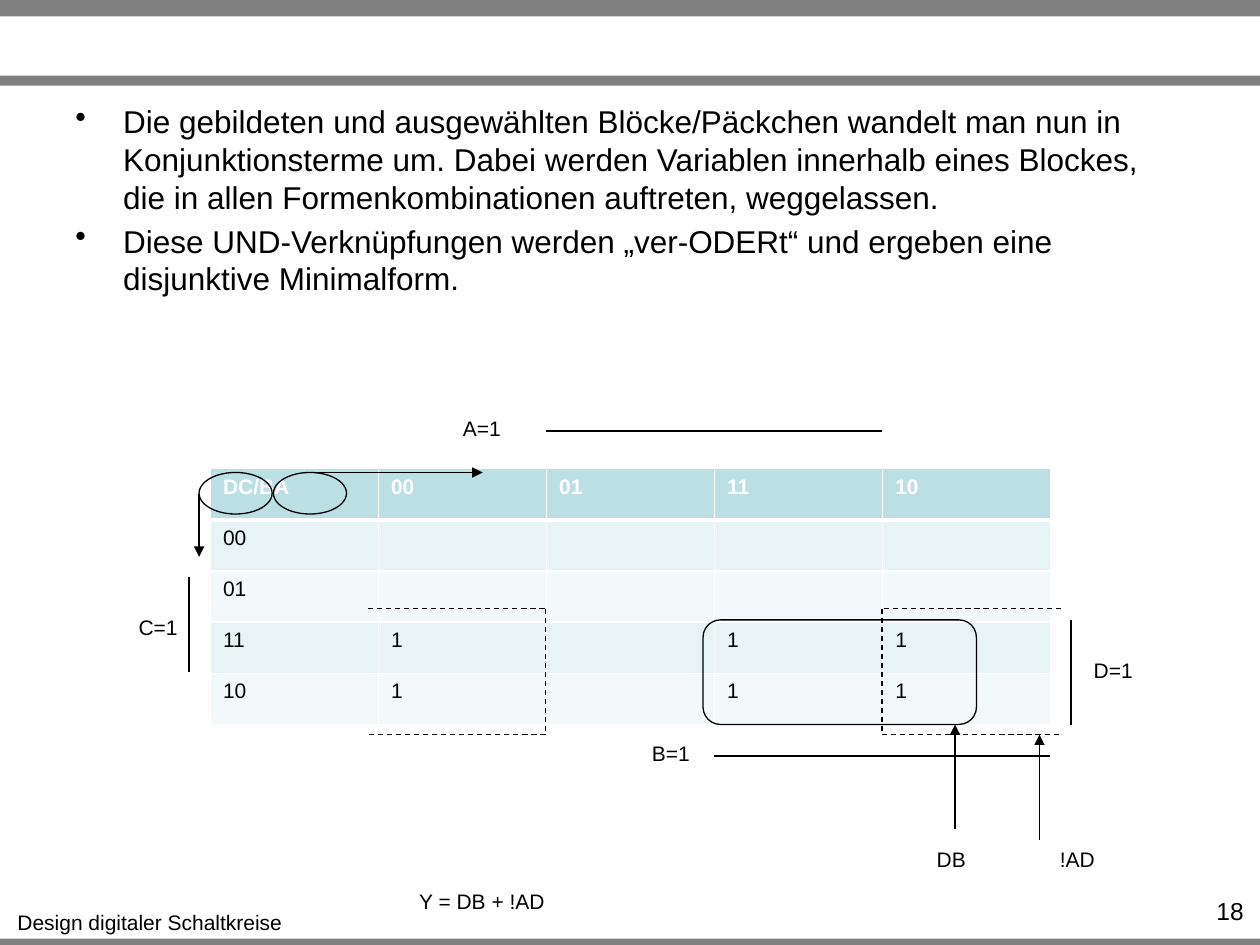
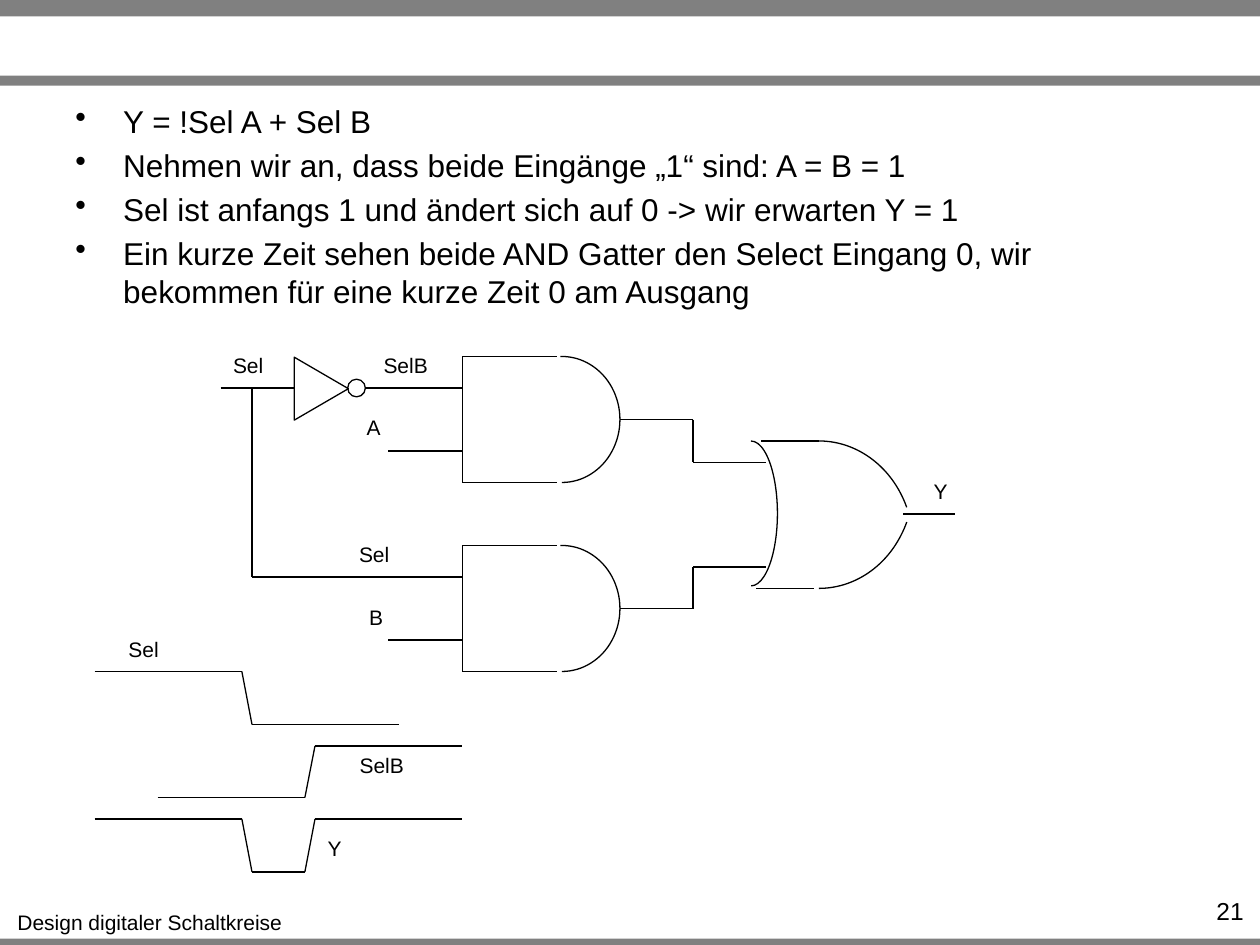
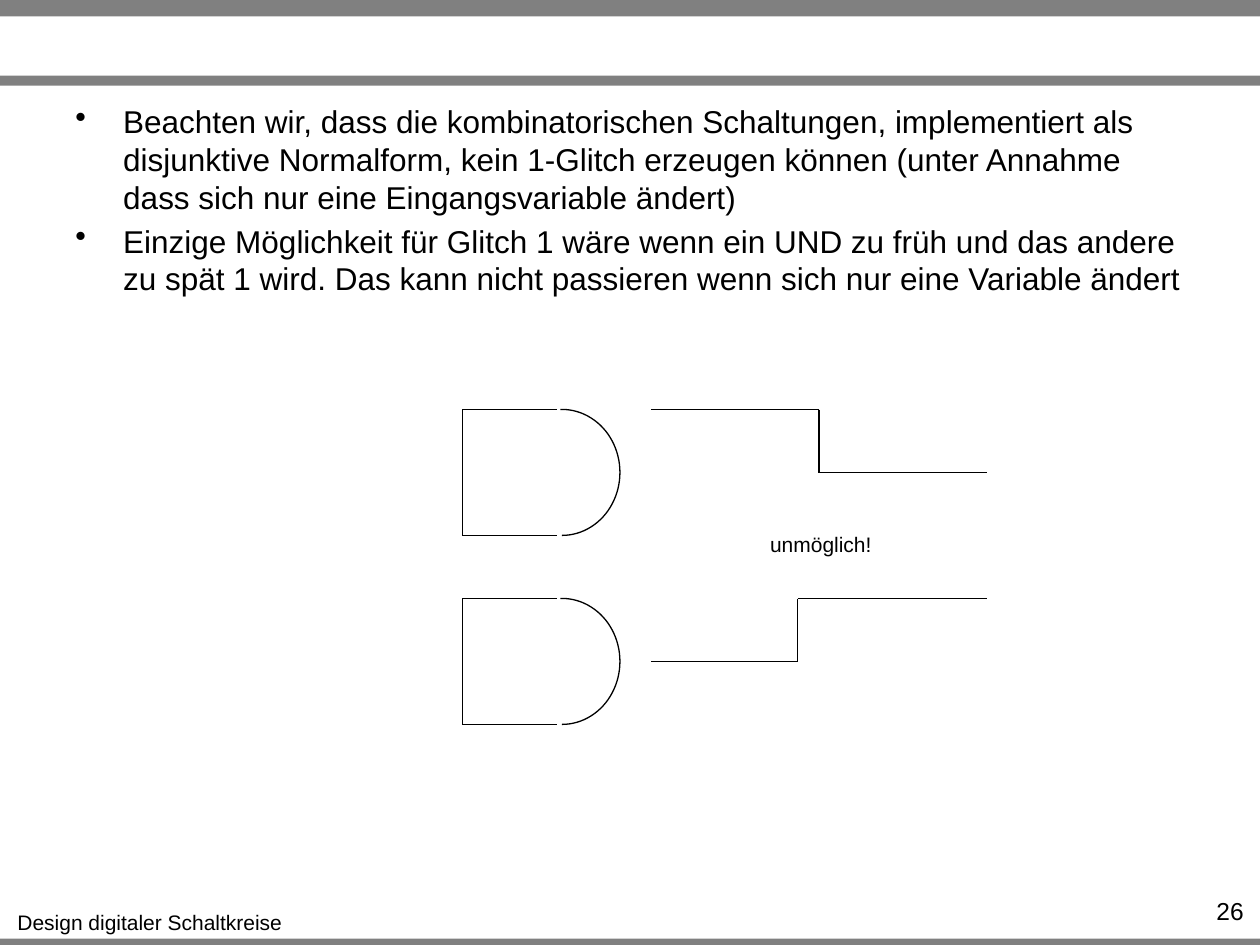
from dataclasses import dataclass
from itertools import pairwise
from typing import NamedTuple

from lxml.etree import SubElement
from pptx import Presentation
from pptx.dml.color import RGBColor
from pptx.enum.dml import MSO_LINE
from pptx.enum.shapes import MSO_CONNECTOR, MSO_SHAPE
from pptx.enum.text import MSO_AUTO_SIZE, PP_ALIGN
from pptx.oxml.ns import qn
from pptx.shapes.autoshape import Shape
from pptx.slide import Slide
from pptx.table import _Cell as Cell
from pptx.text.text import _Paragraph as Para
from pptx.util import Inches, Pt


@dataclass(frozen=True)
class Theme:
    """Colours, font and sizes that all slides share."""
    font: str = "Arial"
    ink: str = "000000"
    paper: str = "FFFFFF"
    band: str = "808080"
    head: str = "BBE0E3"
    odd: str = "E7F3F4"
    even: str = "F3F9FA"
    body: int = 18
    page: int = 14
    small: int = 12
    line: float = 0.75


class Box(NamedTuple):
    """Left, top, width and height in inches."""
    left: float
    top: float
    width: float
    height: float


class Tag(NamedTuple):
    """A short label with its place and width."""
    text: str
    left: float
    top: float
    width: float


class Wire(NamedTuple):
    """A chain of straight lines through points."""
    points: list[tuple[float, float]]
    dash: bool = False
    arrow: bool = False


class Arc(NamedTuple):
    """An arc of the ellipse in a box, clockwise in degrees."""
    box: Box
    start: float
    end: float


THEME = Theme()
BANDS = [Box(0, 7.45, 10, 0.08), Box(0, 0, 10, 0.13), Box(0, 0.6, 10, 0.08)]
FOOTER = Tag("Design digitaler Schaltkreise", 0.03, 7.17, 2.32)
BODY = Box(0.5, 0.76, 9, 1.99)
PAGE = Box(9.1, 7.06, 0.87, 0.24)

MAP_BOX = Box(1.67, 3.72, 6.67, 2.03)
MAP_ROWS = [
    ["DC/BA", "00", "01", "11", "10"],
    ["00", "", "", "", ""],
    ["01", "", "", "", ""],
    ["11", "1", "", "1", "1"],
    ["10", "1", "", "1", "1"],
]
MAP_RINGS = [
    (MSO_SHAPE.ROUNDED_RECTANGLE, Box(5.58, 4.92, 2.17, 0.83)),
    (MSO_SHAPE.OVAL, Box(1.58, 3.75, 0.58, 0.33)),
    (MSO_SHAPE.OVAL, Box(2.17, 3.75, 0.58, 0.33)),
]
MAP_WIRES = [
    Wire([(4.33, 3.42), (7, 3.42)]),
    Wire([(5.67, 6), (8.33, 6)]),
    Wire([(1.5, 4.58), (1.5, 5.33)]),
    Wire([(8.5, 4.92), (8.5, 5.75)]),
    Wire([(1.58, 3.92), (1.58, 4.42)], arrow=True),
    Wire([(2.46, 3.75), (3.83, 3.75)], arrow=True),
    Wire([(8.42, 4.83), (7, 4.83), (7, 5.83), (8.42, 5.83)], dash=True),
    Wire([(2.92, 4.83), (4.33, 4.83), (4.33, 5.83), (2.92, 5.83)], dash=True),
    Wire([(8.25, 6.67), (8.25, 5.83)], arrow=True),
    Wire([(7.58, 6.58), (7.58, 5.75)], arrow=True),
]
MAP_TAGS = [
    Tag("A=1", 3.57, 3.25, 0.51),
    Tag("B=1", 5.07, 5.83, 0.51),
    Tag("C=1", 1, 4.83, 0.51),
    Tag("D=1", 8.58, 5.17, 0.51),
    Tag("!AD", 8.31, 6.67, 0.48),
    Tag("DB", 7.33, 6.67, 0.44),
    Tag("Y = DB + !AD", 3.22, 7, 1.21),
]

OR_ARCS = [
    Arc(Box(5.75, 3.5, 0.42, 1.15), 270, 89.8),
    Arc(Box(5.75, 3.5, 1.5, 1.67), 270, 336.14),
    Arc(Box(5.75, 3, 1.5, 1.67), 23.86, 90),
]
MUX_WIRES = [
    Wire([(1.75, 3.08), (2.33, 3.08)]),
    Wire([(2.76, 3.08), (3.67, 3.08)]),
    Wire([(2, 3.08), (2, 4.58), (3.67, 4.58)]),
    Wire([(3.08, 3.58), (3.67, 3.58)]),
    Wire([(3.08, 5.08), (3.67, 5.08)]),
    Wire([(4.92, 3.33), (5.5, 3.33), (5.5, 3.67), (6.08, 3.67)]),
    Wire([(4.92, 4.83), (5.5, 4.83), (5.5, 4.5), (6.08, 4.5)]),
    Wire([(6.04, 3.5), (6.5, 3.5)]),
    Wire([(6, 4.67), (6.46, 4.67)]),
    Wire([(7.17, 4.08), (7.58, 4.08)]),
    Wire([(0.75, 5.33), (1.92, 5.33), (2, 5.75), (3.17, 5.75)]),
    Wire([(1.25, 6.33), (2.42, 6.33), (2.5, 5.92), (3.67, 5.92)]),
    Wire([(0.75, 6.5), (1.92, 6.5), (2, 6.92), (2.42, 6.92), (2.5, 6.5), (3.67, 6.5)]),
]
MUX_TAGS = [
    Tag("Sel", 1.75, 2.75, 0.44),
    Tag("SelB", 2.94, 2.75, 0.56),
    Tag("A", 2.81, 3.24, 0.31),
    Tag("Sel", 2.75, 4.25, 0.44),
    Tag("B", 2.83, 4.75, 0.31),
    Tag("Y", 7.31, 3.75, 0.31),
    Tag("Sel", 0.92, 5, 0.44),
    Tag("SelB", 2.75, 5.92, 0.56),
    Tag("Y", 2.5, 6.58, 0.31),
]

GLITCH_WIRES = [
    Wire([(5.17, 3.25), (6.5, 3.25), (6.5, 3.75), (7.83, 3.75)]),
    Wire([(5.17, 5.25), (6.33, 5.25), (6.33, 4.75), (7.83, 4.75)]),
]
GLITCH_TAG = Tag("unmöglich!", 6.01, 4.17, 1.01)


def place(box: Box) -> tuple[Inches, ...]:
    """Turn a box into lengths."""
    return tuple(Inches(side) for side in box)


def tint(code: str) -> RGBColor:
    """Turn a hex code into a colour."""
    return RGBColor.from_string(code)


def write(para: Para, text: str, size: int, ink: str = THEME.ink, bold: bool = False) -> None:
    """Add one styled run."""
    run = para.add_run()
    run.text = text
    run.font.name = THEME.font
    run.font.size = Pt(size)
    run.font.bold = bold
    run.font.color.rgb = tint(ink)


def draw_tag(slide: Slide, tag: Tag) -> None:
    """Draw a centred label that grows with its text."""
    frame = slide.shapes.add_textbox(*place(Box(tag.left, tag.top, tag.width, 0.3))).text_frame
    frame.word_wrap = False
    frame.auto_size = MSO_AUTO_SIZE.SHAPE_TO_FIT_TEXT
    frame.paragraphs[0].alignment = PP_ALIGN.CENTER
    write(frame.paragraphs[0], tag.text, THEME.small)


def draw_shape(slide: Slide, kind: MSO_SHAPE, box: Box, fill: str | None = None) -> Shape:
    """Draw a thin black outline, filled if asked."""
    shape = slide.shapes.add_shape(kind, *place(box))
    shape.shadow.inherit = False
    shape.line.color.rgb = tint(THEME.ink)
    shape.line.width = Pt(THEME.line)
    if fill:
        shape.fill.solid()
        shape.fill.fore_color.rgb = tint(fill)
    else:
        shape.fill.background()
    return shape


def draw_arc(slide: Slide, arc: Arc) -> None:
    """Draw an arc between two angles."""
    shape = draw_shape(slide, MSO_SHAPE.ARC, arc.box)
    for index, angle in enumerate((arc.start, arc.end)):
        shape.adjustments[index] = angle * 0.6


def draw_wire(slide: Slide, wire: Wire) -> None:
    """Join the points of a wire by lines."""
    for start, end in pairwise(wire.points):
        ends = [Inches(value) for value in (*start, *end)]
        link = slide.shapes.add_connector(MSO_CONNECTOR.STRAIGHT, *ends)
        link.line.color.rgb = tint(THEME.ink)
        link.line.width = Pt(THEME.line)
        if wire.dash:
            link.line.dash_style = MSO_LINE.DASH
        props = link._element.spPr
        if wire.arrow:
            SubElement(props.find(qn("a:ln")), qn("a:tailEnd"), type="triangle")
        SubElement(props, qn("a:effectLst"))


def draw_gate(slide: Slide, top: float) -> None:
    """Draw an AND gate."""
    base = top + 1
    draw_wire(slide, Wire([(4.42, top), (3.67, top), (3.67, base), (4.42, base)]))
    draw_arc(slide, Arc(Box(4, top, 0.92, 1), 268.5, 90))


def edge_cell(cell: Cell, base: int) -> None:
    """Give a cell white borders with a set base width."""
    props = cell._tc.get_or_add_tcPr()
    for side, width in (("L", 1), ("R", 1), ("T", 1), ("B", base)):
        line = SubElement(props, qn(f"a:ln{side}"), w=str(Pt(width)))
        SubElement(SubElement(line, qn("a:solidFill")), qn("a:srgbClr"), val=THEME.paper)


def draw_map(slide: Slide) -> None:
    """Draw the table of values."""
    size = len(MAP_ROWS)
    table = slide.shapes.add_table(size, size, *place(MAP_BOX)).table
    table.horz_banding = False
    for row, texts in enumerate(MAP_ROWS):
        head = row == 0
        fill = THEME.head if head else THEME.odd if row % 2 else THEME.even
        for column, text in enumerate(texts):
            cell = table.cell(row, column)
            edge_cell(cell, 3 if head else 1)
            cell.fill.solid()
            cell.fill.fore_color.rgb = tint(fill)
            if text:
                ink = THEME.paper if head else THEME.ink
                write(cell.text_frame.paragraphs[0], text, THEME.small, ink, head)


def draw_body(slide: Slide, points: list[str]) -> None:
    """Write the bullet points."""
    frame = slide.shapes.add_textbox(*place(BODY)).text_frame
    frame.word_wrap = True
    for index, point in enumerate(points):
        para = frame.add_paragraph() if index else frame.paragraphs[0]
        props = para._p.get_or_add_pPr()
        props.set("marL", str(Inches(0.38)))
        props.set("indent", str(-Inches(0.38)))
        SubElement(props, qn("a:buChar"), char="•")
        if index:
            para.space_before = Pt(THEME.body * 0.2)
        write(para, point, THEME.body)


def start_slide(deck: Presentation, number: int, points: list[str]) -> Slide:
    """Add a slide with bands, footer, bullets and number."""
    slide = deck.slides.add_slide(deck.slide_layouts[6])
    for box in BANDS:
        band = draw_shape(slide, MSO_SHAPE.RECTANGLE, box, THEME.band)
        band.line.fill.background()
    draw_tag(slide, FOOTER)
    draw_body(slide, points)
    frame = slide.shapes.add_textbox(*place(PAGE)).text_frame
    frame.word_wrap = True
    frame.paragraphs[0].alignment = PP_ALIGN.RIGHT
    write(frame.paragraphs[0], str(number), THEME.page)
    return slide


def add_parts(slide: Slide, wires: list[Wire], tags: list[Tag]) -> None:
    """Draw wires, then labels."""
    for wire in wires:
        draw_wire(slide, wire)
    for tag in tags:
        draw_tag(slide, tag)


def build_map(deck: Presentation) -> None:
    """Build the slide on blocks and terms."""
    slide = start_slide(deck, 18, [
        "Die gebildeten und ausgewählten Blöcke/Päckchen wandelt man nun in "
        "Konjunktionsterme um. Dabei werden Variablen innerhalb eines Blockes, "
        "die in allen Formenkombinationen auftreten, weggelassen.",
        "Diese UND-Verknüpfungen werden „ver-ODERt“ und ergeben eine "
        "disjunktive Minimalform.",
    ])
    draw_map(slide)
    for kind, box in MAP_RINGS:
        draw_shape(slide, kind, box)
    add_parts(slide, MAP_WIRES, MAP_TAGS)


def build_mux(deck: Presentation) -> None:
    """Build the slide on the select circuit."""
    slide = start_slide(deck, 21, [
        "Y = !Sel A + Sel B",
        "Nehmen wir an, dass beide Eingänge „1“ sind: A = B = 1",
        "Sel ist anfangs 1 und ändert sich auf 0 -> wir erwarten Y = 1",
        "Ein kurze Zeit sehen beide AND Gatter den Select Eingang 0, wir "
        "bekommen für eine kurze Zeit 0 am Ausgang",
    ])
    for top in (2.83, 4.33):
        draw_gate(slide, top)
    for arc in OR_ARCS:
        draw_arc(slide, arc)
    add_parts(slide, MUX_WIRES, MUX_TAGS)
    draw_shape(slide, MSO_SHAPE.OVAL, Box(2.76, 3.01, 0.14, 0.14), THEME.paper)
    draw_shape(slide, MSO_SHAPE.ISOSCELES_TRIANGLE, Box(2.3, 2.87, 0.5, 0.43)).rotation = 90


def build_glitch(deck: Presentation) -> None:
    """Build the slide on the glitch that cannot occur."""
    slide = start_slide(deck, 26, [
        "Beachten wir, dass die kombinatorischen Schaltungen, implementiert als "
        "disjunktive Normalform, kein 1-Glitch erzeugen können (unter Annahme "
        "dass sich nur eine Eingangsvariable ändert)",
        "Einzige Möglichkeit für Glitch 1 wäre wenn ein UND zu früh und das andere "
        "zu spät 1 wird. Das kann nicht passieren wenn sich nur eine Variable ändert",
    ])
    for top in (3.25, 4.75):
        draw_gate(slide, top)
    add_parts(slide, GLITCH_WIRES, [GLITCH_TAG])


def main() -> None:
    """Build and save the deck."""
    deck = Presentation()
    deck.slide_width, deck.slide_height = Inches(10), Inches(7.5)
    for build in (build_map, build_mux, build_glitch):
        build(deck)
    deck.save("out.pptx")


if __name__ == "__main__":
    main()
